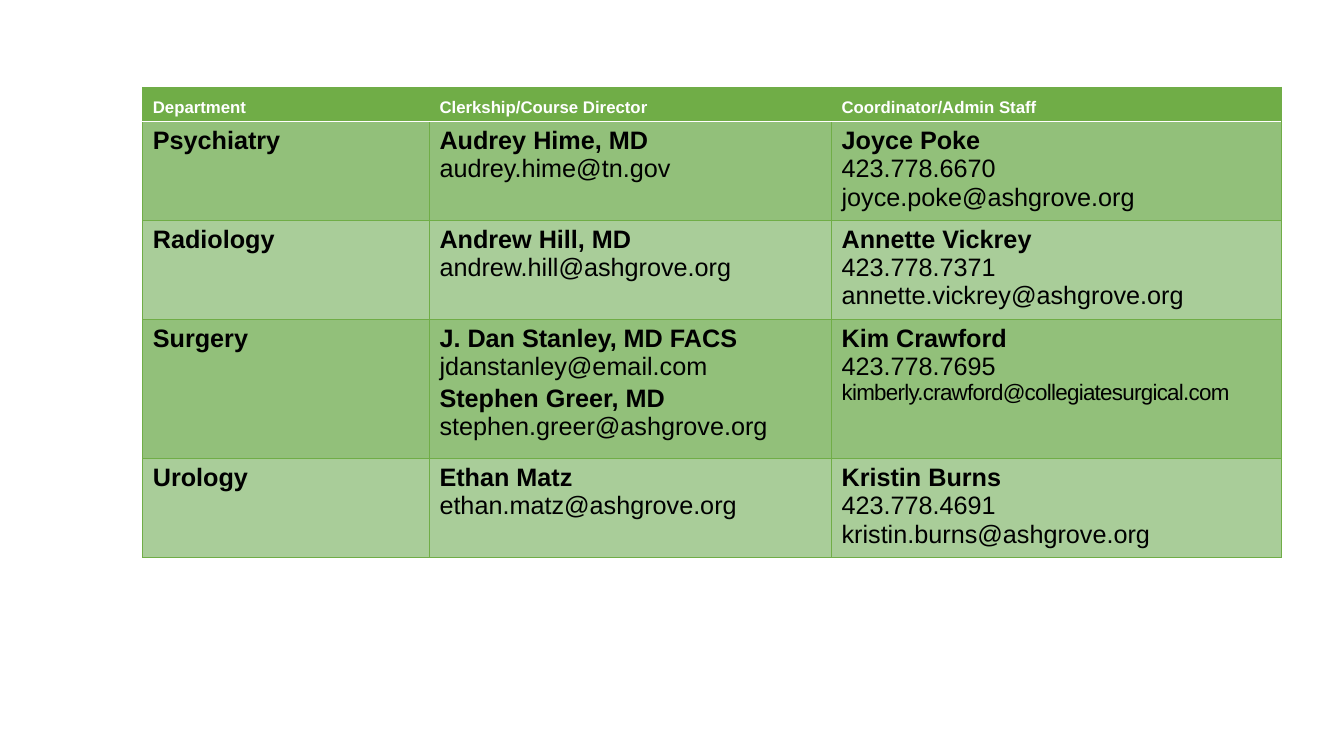
"""Build a slide with a contact table of clerkship departments."""
from dataclasses import dataclass

from lxml import etree
from pptx import Presentation
from pptx import util as u
from pptx.dml import color
from pptx.enum import text
from pptx.oxml import ns

PX = 9525


@dataclass(frozen=True)
class Theme:
    """Hold the colours, font and type sizes."""
    font: str = "Arial"
    green: str = "70AD47"
    dark_band: str = "92C07A"
    light_band: str = "A9CD99"
    white: str = "FFFFFF"
    black: str = "000000"
    head_size: int = 12
    body_size: int = 18
    tight_size: int = 16
    tight_spacing: float = -0.5
    entry_gap: int = 3
    grid: float = 0.5
    rule: int = 1


class Deck:
    """Hold the theme and the current slide."""

    def __init__(self, theme, width, height):
        """Start a presentation with one blank slide."""
        self.theme = theme
        self.prs = Presentation()
        self.prs.slide_width, self.prs.slide_height = width * PX, height * PX
        self.s = self.prs.slides.add_slide(self.prs.slide_layouts[6])

    def run(self, p, words, size, fill, bold, spacing=0):
        """Add one formatted run to a paragraph."""
        r = p.add_run()
        r.text = words
        style = {"name": self.theme.font, "size": u.Pt(size), "bold": bold}
        for key, value in style.items():
            setattr(r.font, key, value)
        r.font.color.rgb = color.RGBColor.from_string(fill)
        if spacing:
            r.font._element.set("spc", str(round(spacing * 100)))

    def border(self, cell, side, line, width):
        """Draw one side of a cell."""
        pr = cell._tc.get_or_add_tcPr()
        ln = etree.SubElement(pr, ns.qn(f"a:ln{side}"), w=str(u.Pt(width)))
        fill = etree.SubElement(ln, ns.qn("a:solidFill"))
        etree.SubElement(fill, ns.qn("a:srgbClr"), val=line)

    def cell(self, cell, row, lines):
        """Fill, outline and write one cell."""
        t = self.theme
        head = row == 0
        grid, rule = (t.green, t.grid), (t.white, t.rule)
        sides = {"L": grid, "R": grid, "T": rule if row == 1 else grid,
                 "B": rule if head else grid}
        for side, line in sides.items():
            self.border(cell, side, *line)
        band = t.green if head else t.dark_band if row % 2 else t.light_band
        cell.fill.solid()
        cell.fill.fore_color.rgb = color.RGBColor.from_string(band)
        cell.vertical_anchor = text.MSO_ANCHOR.BOTTOM if head else text.MSO_ANCHOR.TOP
        tf = cell.text_frame
        for i, words in enumerate(lines):
            p = tf.add_paragraph() if i else tf.paragraphs[0]
            name = not any(c in words for c in "@0123456789")
            if i and name:
                p.space_before = u.Pt(t.entry_gap)
            if head:
                self.run(p, words, t.head_size, t.white, True)
            elif len(words) > 30:
                self.run(p, words, t.tight_size, t.black, name, t.tight_spacing)
            else:
                self.run(p, words, t.body_size, t.black, name)

    def table(self, left, top, widths, heights, rows):
        """Add a table from rows of cells, each a list of lines."""
        box = [v * PX for v in (left, top, sum(widths), sum(heights))]
        tbl = self.s.shapes.add_table(len(rows), len(widths), *box).table
        tbl.horz_banding = False
        for col, width in zip(tbl.columns, widths):
            col.width = width * PX
        for i, (row, height) in enumerate(zip(rows, heights)):
            tbl.rows[i].height = height * PX
            for j, lines in enumerate(row):
                self.cell(tbl.cell(i, j), i, lines)


CONTACTS = [
    [["Department"], ["Clerkship/Course Director"], ["Coordinator/Admin Staff"]],
    [["Psychiatry"],
     ["Audrey Hime, MD", "audrey.hime@tn.gov"],
     ["Joyce Poke", "423.778.6670", "joyce.poke@ashgrove.org"]],
    [["Radiology"],
     ["Andrew Hill, MD", "andrew.hill@ashgrove.org"],
     ["Annette Vickrey", "423.778.7371", "annette.vickrey@ashgrove.org"]],
    [["Surgery"],
     ["J. Dan Stanley, MD FACS", "jdanstanley@email.com",
      "Stephen Greer, MD", "stephen.greer@ashgrove.org"],
     ["Kim Crawford", "423.778.7695", "kimberly.crawford@collegiatesurgical.com"]],
    [["Urology"],
     ["Ethan Matz", "ethan.matz@ashgrove.org"],
     ["Kristin Burns", "423.778.4691", "kristin.burns@ashgrove.org"]],
]


def main():
    """Build and save the slide."""
    deck = Deck(Theme(), 1280, 720)
    deck.table(136, 83, [273, 383, 428], [33, 94, 94, 133, 94], CONTACTS)
    deck.prs.save("out.pptx")


if __name__ == "__main__":
    main()
